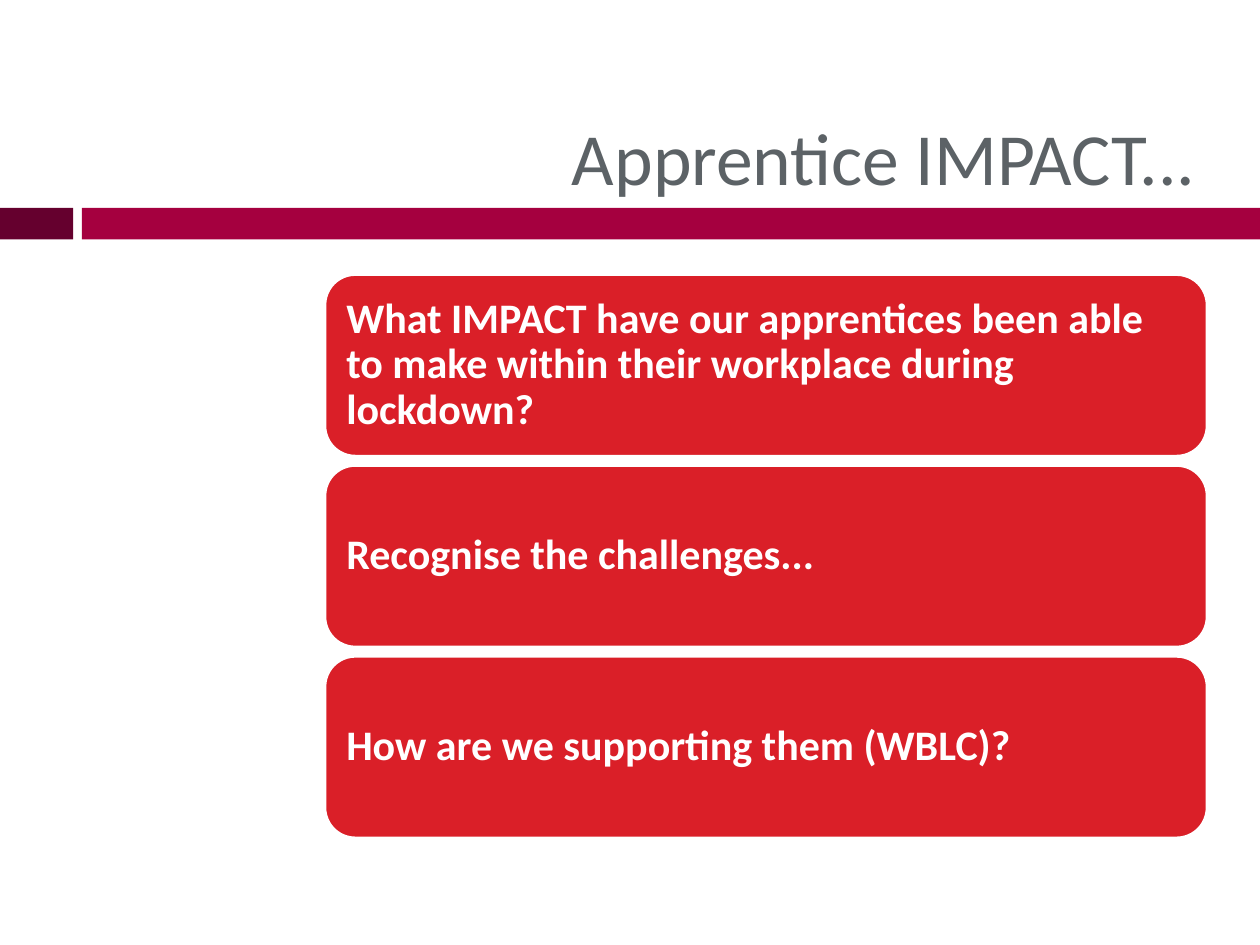
from dataclasses import dataclass

from pptx import Presentation
from pptx.dml.color import RGBColor
from pptx.enum import shapes, text
from pptx.util import Inches, Pt

PLUM = RGBColor(0x65, 0x00, 0x2E)
CRIMSON = RGBColor(0xA5, 0x00, 0x3F)
RED = RGBColor(0xDA, 0x1F, 0x28)
GREY = RGBColor(0x5C, 0x62, 0x66)
WHITE = RGBColor(0xFF, 0xFF, 0xFF)
FONT = "Calibri"

CARD_TOP = 2.18
CARD_PITCH = 1.515


@dataclass(frozen=True)
class Band:
    left: float
    width: float
    color: RGBColor


BANDS = (Band(0, 0.58, PLUM), Band(0.65, 9.35, CRIMSON))
QUESTIONS = (
    "What IMPACT have our apprentices been able to make within their "
    "workplace during lockdown?",
    "Recognise the challenges...",
    "How are we supporting them (WBLC)?",
)


def add_filled_shape(slide, kind: shapes.MSO_SHAPE, left: float, top: float,
                     width: float, height: float, color: RGBColor):
    shape = slide.shapes.add_shape(
        kind, Inches(left), Inches(top), Inches(width), Inches(height))
    shape.shadow.inherit = False
    shape.fill.solid()
    shape.fill.fore_color.rgb = color
    shape.line.fill.background()
    return shape


def set_font(para, size: float, color: RGBColor, bold: bool = False) -> None:
    para.font.name = FONT
    para.font.size = Pt(size)
    para.font.bold = bold
    para.font.color.rgb = color


def add_title(slide, wording: str) -> None:
    title = slide.shapes.title
    title.left, title.top = Inches(0.67), Inches(0.17)
    title.width, title.height = Inches(8.92), Inches(1.47)
    frame = title.text_frame
    frame.text = wording
    frame.vertical_anchor = text.MSO_ANCHOR.BOTTOM
    para = frame.paragraphs[0]
    para.alignment = text.PP_ALIGN.RIGHT
    set_font(para, 42, GREY)


def add_card(slide, top: float, wording: str) -> None:
    card = add_filled_shape(slide, shapes.MSO_SHAPE.ROUNDED_RECTANGLE,
                            2.58, top, 7, 1.44, RED)
    card.line.color.rgb = WHITE
    card.line.width = Pt(1.5)
    frame = card.text_frame
    frame.word_wrap = True
    frame.vertical_anchor = text.MSO_ANCHOR.MIDDLE
    frame.margin_left = frame.margin_right = Inches(0.1)
    frame.margin_top = frame.margin_bottom = Inches(0.1)
    frame.text = wording
    para = frame.paragraphs[0]
    para.alignment = text.PP_ALIGN.LEFT
    para.line_spacing = 0.9
    set_font(para, 24, WHITE, bold=True)


def main() -> None:
    deck = Presentation()
    deck.slide_width, deck.slide_height = Inches(10), Inches(7.5)
    slide = deck.slides.add_slide(deck.slide_layouts.get_by_name("Title Only"))
    for band in BANDS:
        add_filled_shape(slide, shapes.MSO_SHAPE.RECTANGLE,
                         band.left, 1.65, band.width, 0.25, band.color)
    add_title(slide, "Apprentice IMPACT...")
    for index, question in enumerate(QUESTIONS):
        add_card(slide, CARD_TOP + index * CARD_PITCH, question)
    deck.save("out.pptx")


if __name__ == "__main__":
    main()
